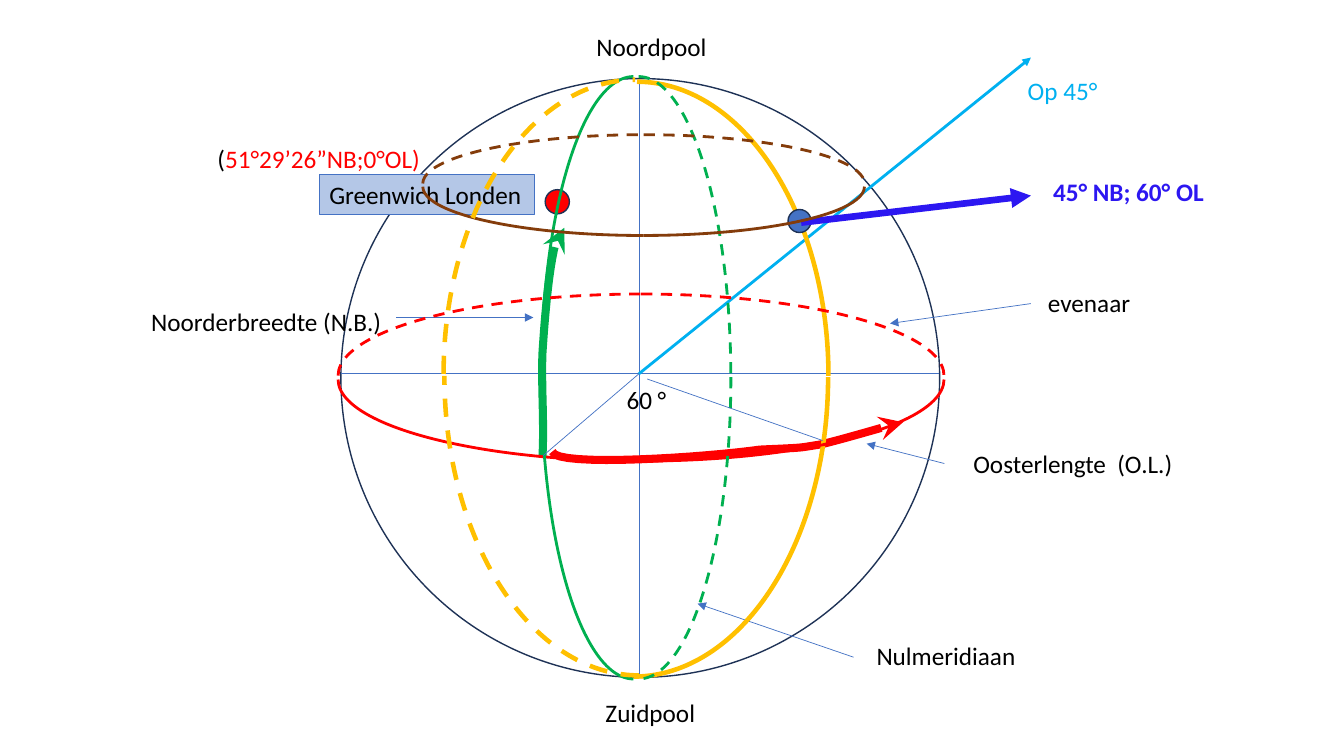
from dataclasses import dataclass
from typing import Any, Optional

import lxml.etree
import pptx
import pptx.dml.color
import pptx.enum.dml
import pptx.enum.shapes
import pptx.enum.text
import pptx.oxml.ns
import pptx.util

Cm = pptx.util.Cm
Shapes = pptx.enum.shapes.MSO_SHAPE
Point = tuple[float, float]


@dataclass(frozen=True)
class Theme:
    font: str = "Calibri"
    text_size: float = 18
    black: str = "000000"
    outline: str = "1E3256"
    blue: str = "4472C4"
    pale_blue: str = "B4C7E7"
    sky: str = "00B0F0"
    violet: str = "2C17F1"
    red: str = "FF0000"
    green: str = "00B050"
    yellow: str = "FFC000"
    brown: str = "843C0B"
    hairline: float = 0.5
    border: float = 0.75
    rim: float = 1
    circle: float = 2
    meridian: float = 3.25
    vector: float = 4.75
    route: float = 5.75


THEME = Theme()
NORTH_EAST, SOUTH_EAST, SOUTH_WEST, NORTH_WEST = 270, 0, 90, 180
ADJUSTMENT_PER_DEGREE = 0.6
LABEL_HEIGHT = 1.02
CENTRE = (16.1, 9.42)
CURVE_STEPS = 16


@dataclass(frozen=True)
class Label:
    runs: tuple[tuple[str, str], ...]
    left: float
    top: float
    width: float
    wrap: bool = False
    bold: bool = False


@dataclass(frozen=True)
class Segment:
    start: Point
    end: Point
    color: str = THEME.blue
    weight: float = THEME.hairline
    arrow: bool = False


@dataclass(frozen=True)
class Solid:
    kind: Any
    left: float
    top: float
    width: float
    height: float
    fill: Optional[str] = None
    line: str = THEME.outline
    weight: float = THEME.rim
    rotation: float = 0
    text: str = ""


@dataclass(frozen=True)
class Quarter:
    left: float
    top: float
    width: float
    height: float
    start_angle: int
    color: str
    weight: float = THEME.circle
    dashed: bool = False
    rotation: float = 0


@dataclass(frozen=True)
class Route:
    start: Point
    curves: tuple[tuple[Point, Point, Point], ...]
    color: str


def rgb(color: str) -> pptx.dml.color.RGBColor:
    return pptx.dml.color.RGBColor.from_string(color)


def apply_format(target: Any, values: dict[str, Any]) -> None:
    for name, value in values.items():
        setattr(target, name, value)


def style_line(shape: Any, color: str, weight: float, dashed: bool = False) -> None:
    shape.line.color.rgb = rgb(color)
    shape.line.width = pptx.util.Pt(weight)
    if dashed:
        shape.line.dash_style = pptx.enum.dml.MSO_LINE.DASH


def add_arrowhead(shape: Any, kind: str) -> None:
    line = shape.element.spPr.find(pptx.oxml.ns.qn("a:ln"))
    lxml.etree.SubElement(line, pptx.oxml.ns.qn("a:tailEnd"), type=kind)


def write_text(frame: Any, runs: tuple[tuple[str, str], ...], wrap: bool, bold: bool) -> None:
    apply_format(frame, {
        "word_wrap": wrap,
        "auto_size": pptx.enum.text.MSO_AUTO_SIZE.SHAPE_TO_FIT_TEXT,
    })
    para = frame.paragraphs[0]
    para.alignment = pptx.enum.text.PP_ALIGN.LEFT
    for text, color in runs:
        span = para.add_run()
        span.text = text
        apply_format(span.font, {
            "name": THEME.font, "size": pptx.util.Pt(THEME.text_size), "bold": bold})
        span.font.color.rgb = rgb(color)


def draw_label(page: Any, label: Label) -> None:
    box = page.shapes.add_textbox(
        Cm(label.left), Cm(label.top), Cm(label.width), Cm(LABEL_HEIGHT))
    write_text(box.text_frame, label.runs, label.wrap, label.bold)


def draw_segment(page: Any, segment: Segment) -> None:
    line = page.shapes.add_connector(
        pptx.enum.shapes.MSO_CONNECTOR.STRAIGHT,
        *(Cm(value) for value in segment.start + segment.end))
    style_line(line, segment.color, segment.weight)
    if segment.arrow:
        add_arrowhead(line, "triangle")
    lxml.etree.SubElement(line.element.spPr, pptx.oxml.ns.qn("a:effectLst"))


def draw_solid(page: Any, solid: Solid) -> None:
    shape = page.shapes.add_shape(
        solid.kind, Cm(solid.left), Cm(solid.top), Cm(solid.width), Cm(solid.height))
    shape.shadow.inherit = False
    shape.rotation = solid.rotation
    if solid.fill:
        shape.fill.solid()
        shape.fill.fore_color.rgb = rgb(solid.fill)
    else:
        shape.fill.background()
    style_line(shape, solid.line, solid.weight)
    if solid.text:
        write_text(shape.text_frame, ((solid.text, THEME.black),), False, False)


def draw_quarter(page: Any, quarter: Quarter) -> None:
    arc = page.shapes.add_shape(
        Shapes.ARC, Cm(quarter.left), Cm(quarter.top), Cm(quarter.width), Cm(quarter.height))
    arc.shadow.inherit = False
    arc.rotation = quarter.rotation
    arc.adjustments[0] = quarter.start_angle * ADJUSTMENT_PER_DEGREE
    arc.adjustments[1] = (quarter.start_angle + 90) % 360 * ADJUSTMENT_PER_DEGREE
    arc.fill.background()
    style_line(arc, quarter.color, quarter.weight, quarter.dashed)


def curve_point(points: tuple[Point, ...], t: float) -> Point:
    weights = ((1 - t) ** 3, 3 * t * (1 - t) ** 2, 3 * t * t * (1 - t), t ** 3)
    return (sum(w * x for w, (x, _) in zip(weights, points)),
            sum(w * y for w, (_, y) in zip(weights, points)))


def draw_route(page: Any, route: Route) -> None:
    builder = page.shapes.build_freeform(Cm(route.start[0]), Cm(route.start[1]))
    origin = route.start
    for curve in route.curves:
        points = [curve_point((origin, *curve), step / CURVE_STEPS)
                  for step in range(1, CURVE_STEPS + 1)]
        builder.add_line_segments([(Cm(x), Cm(y)) for x, y in points], close=False)
        origin = curve[-1]
    shape = builder.convert_to_shape()
    shape.shadow.inherit = False
    shape.fill.background()
    style_line(shape, route.color, THEME.route)
    add_arrowhead(shape, "stealth")


def plain(text: str, left: float, top: float, width: float, wrap: bool = False) -> Label:
    return Label(((text, THEME.black),), left, top, width, wrap)


def parallel(left: float, front: float, back: float, width: float, height: float,
             color: str) -> list[Quarter]:
    sides = ((NORTH_EAST, front, False), (SOUTH_EAST, front, False),
             (NORTH_WEST, back, True), (SOUTH_WEST, back, True))
    return [Quarter(left, top, width, height, angle, color, dashed=dashed, rotation=90)
            for angle, top, dashed in sides]


def prime_meridian() -> list[Quarter]:
    sides = ((13.64, NORTH_WEST, SOUTH_WEST, False), (13.77, NORTH_EAST, SOUTH_EAST, True))
    return [Quarter(left, top, 4.65, 15.21, angle, THEME.green, dashed=dashed)
            for left, north, south, dashed in sides
            for top, angle in ((1.93, north), (1.9, south))]


def east_meridian(upper: Point, lower: Point, north: int, south: int,
                  dashed: bool) -> list[Quarter]:
    return [Quarter(*upper, 9.65, 14.83, north, THEME.yellow, THEME.meridian, dashed),
            Quarter(*lower, 9.8, 15.09, south, THEME.yellow, THEME.meridian, dashed)]


SCENE = [
    Solid(Shapes.OVAL, 8.59, 1.98, 15.09, 15.09, rotation=351.3),
    plain("Zuidpool", 15.01, 17.45, 2.79),
    Segment((8.59, 9.42), (23.67, 9.42)),
    plain("evenaar", 26.16, 7.11, 2.62),
    Segment((25.98, 7.65), (22.43, 8.15), arrow=True),
    plain("Nulmeridiaan", 21.84, 16, 4.34, wrap=True),
    Segment((21.51, 16.56), (17.58, 15.21), arrow=True),
    Segment((16.1, 2.01), (16.1, 17.09)),
    Route((13.92, 11.38), (
        ((13.99, 11.79), (17.91, 11.51), (19.15, 11.33)),
        ((20.24, 11.28), (20.07, 11.3), (20.68, 11.2)),
        ((21.26, 11.07), (22.38, 10.72), (22.76, 10.64))), THEME.red),
    plain("Oosterlengte  (O.L.)", 24.28, 11.18, 5.77, wrap=True),
    Segment((23.8, 11.68), (21.84, 11.18), arrow=True),
    Route((13.67, 11.53), (
        ((13.72, 10.69), (13.64, 9.75), (13.67, 8.92)),
        ((13.72, 8.1), (13.89, 5.74), (14.22, 5.74))), THEME.green),
    plain("Noordpool", 14.78, 0.66, 3.33),
    plain("Noorderbreedte (N.B.)", 3.56, 7.59, 6.38),
    Segment((9.98, 8), (13.44, 8), arrow=True),
    Segment(CENTRE, (25.98, 1.45), THEME.sky, THEME.circle, True),
    Label((("Op 45°", THEME.sky),), 25.65, 1.78, 2.29),
    *east_meridian((11.23, 2.06), (11.07, 1.96), NORTH_EAST, SOUTH_EAST, False),
    Solid(Shapes.OVAL, 19.86, 5.28, 0.58, 0.58, THEME.blue),
    Segment((20.19, 5.61), (25.98, 4.93), THEME.violet, THEME.vector, True),
    Label((("45° NB; 60° OL", THEME.violet),), 26.29, 4.32, 4.32, bold=True),
    Solid(Shapes.OVAL, 13.74, 4.78, 0.61, 0.61, THEME.red),
    Solid(Shapes.RECTANGLE, 8.05, 4.39, 5.41, LABEL_HEIGHT, THEME.pale_blue,
          THEME.blue, THEME.border, text="Greenwich Londen"),
    *parallel(14.1, 1.93, 1.83, 4.11, 15.27, THEME.red),
    *prime_meridian(),
    *parallel(14.99, -0.86, -0.94, 2.46, 11.13, THEME.brown),
    Segment(CENTRE, (13.69, 11.48)),
    plain("60 °", 15.54, 9.55, 1.52, wrap=True),
    Segment((16.31, 9.55), (20.73, 11.1)),
    *east_meridian((11.18, 2.01), (11.2, 1.93), NORTH_WEST, SOUTH_WEST, True),
    Label((("(", THEME.black), ("51°29’26”NB;0°OL)", THEME.red)), 5.23, 3.48, 5.66),
]
DRAWERS = {Label: draw_label, Segment: draw_segment, Solid: draw_solid,
           Quarter: draw_quarter, Route: draw_route}


def main() -> None:
    deck = pptx.Presentation()
    apply_format(deck, {"slide_width": Cm(33.87), "slide_height": Cm(19.05)})
    page = deck.slides.add_slide(deck.slide_layouts.get_by_name("Blank"))
    for item in SCENE:
        DRAWERS[type(item)](page, item)
    deck.save("out.pptx")


if __name__ == "__main__":
    main()
